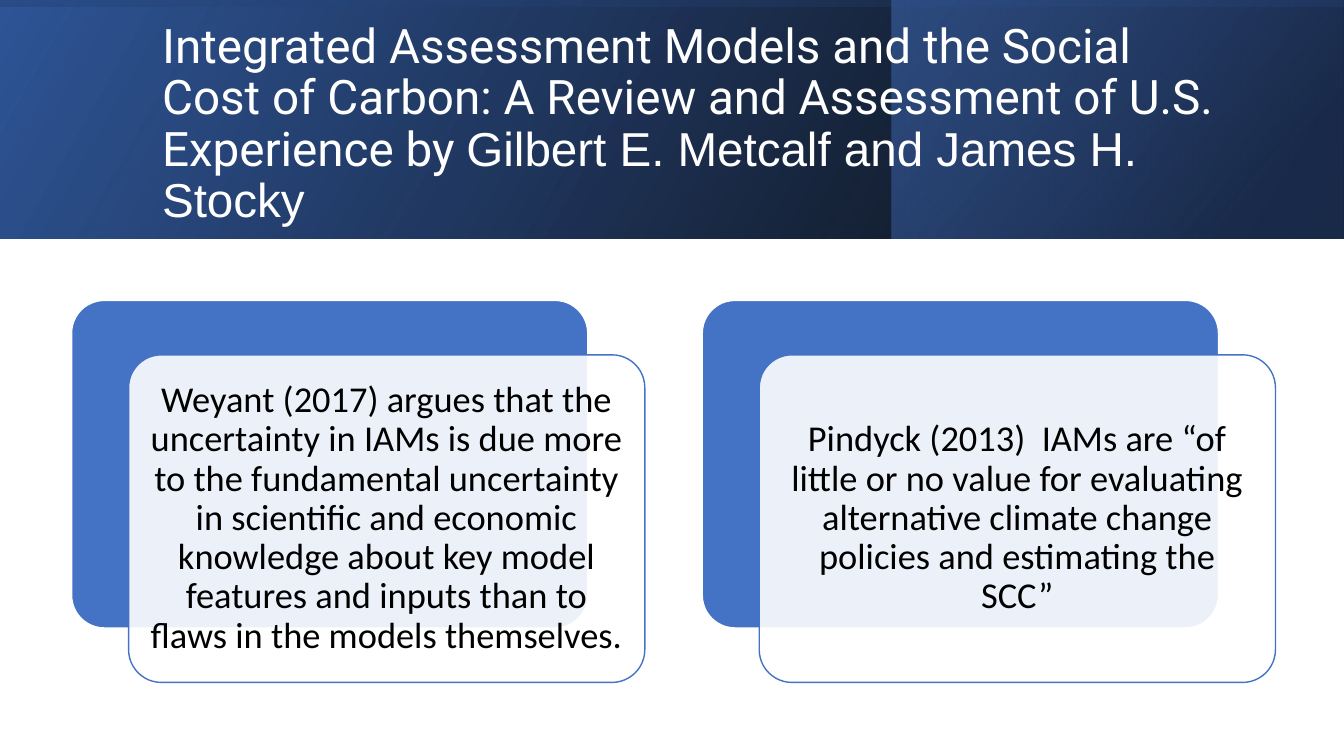
from dataclasses import dataclass

from lxml.etree import SubElement
from pptx import Presentation
from pptx.dml.color import RGBColor
from pptx.enum.shapes import MSO_SHAPE as Preset
from pptx.enum.text import MSO_ANCHOR as Anchor, PP_ALIGN as Align
from pptx.oxml.ns import qn
from pptx.shapes.autoshape import Shape
from pptx.slide import Slide
from pptx.util import Inches, Pt

PAGE_WIDTH, PAGE_HEIGHT = 13.33, 7.5
BANNER_HEIGHT = 2.37
CARD_WIDTH, CARD_HEIGHT = 5.12, 3.25
CARD_TOP, CARD_LEFT, CARD_PITCH = 2.98, 0.71, 6.255
FRONT_SHIFT_X, FRONT_SHIFT_Y = 0.565, 0.54
CARD_INSET = 0.11
BLUE, WHITE, BLACK = "4472C4", "FFFFFF", "000000"


@dataclass
class Stop:
    position: float
    color: str
    opacity: int = 100


@dataclass
class BannerLayer:
    left: float
    top: float
    width: float
    height: float
    angle: float  # counter-clockwise, before mirroring
    stops: tuple[Stop, Stop]
    rotation: float = 0


BANNER_LAYERS = [
    BannerLayer(0, 0, PAGE_WIDTH, BANNER_HEIGHT, 30,
                (Stop(0, BLACK, 96), Stop(1, "2F5597"))),
    BannerLayer(8.84, 0, 4.48, BANNER_HEIGHT, 40,
                (Stop(0.19, "203864", 68), Stop(1, BLUE, 48))),
    BannerLayer((PAGE_WIDTH - BANNER_HEIGHT) / 2, (BANNER_HEIGHT - PAGE_WIDTH) / 2,
                BANNER_HEIGHT, PAGE_WIDTH, 10,
                (Stop(0.23, "2F5597", 16), Stop(0.99, BLACK, 45)), rotation=270),
]

TITLE_SPANS = [
    ("Integrated Assessment Models and the Social Cost of Carbon: "
     "A Review and Assessment of U.S. Experience by ", "Roboto"),
    ("Gilbert E. Metcalf and James H. Stocky", "Arial"),
]

QUOTES = [
    "Weyant (2017) argues that the uncertainty in IAMs is due more to the fundamental "
    "uncertainty in scientific and economic knowledge about key model features and "
    "inputs than to flaws in the models themselves.",
    "Pindyck (2013)  IAMs are “of little or no value for evaluating alternative "
    "climate change policies and estimating the SCC”",
]


def rgb(color: str) -> RGBColor:
    return RGBColor.from_string(color)


def set_opacity(shape: Shape, percents: list[int]) -> None:
    """Give the fill colours of a shape their opacities, in order."""
    colors = list(shape.element.spPr.iter(qn("a:srgbClr")))
    for color, percent in zip(colors, percents):
        if percent < 100:
            SubElement(color, qn("a:alpha")).set("val", str(percent * 1000))


def add_banner_layer(page: Slide, layer: BannerLayer) -> None:
    box = page.shapes.add_shape(Preset.RECTANGLE, Inches(layer.left), Inches(layer.top),
                                Inches(layer.width), Inches(layer.height))
    box.shadow.inherit = False
    box.line.fill.background()
    box.rotation = layer.rotation
    box.element.spPr.find(qn("a:xfrm")).set("flipH", "1")
    box.fill.gradient()
    box.fill.gradient_angle = layer.angle
    for target, stop in zip(box.fill.gradient_stops, layer.stops):
        target.position = stop.position
        target.color.rgb = rgb(stop.color)
    set_opacity(box, [stop.opacity for stop in layer.stops])


def add_title(page: Slide) -> None:
    box = page.shapes.add_textbox(Inches(1.51), Inches(0.38), Inches(10.63), Inches(1.72))
    frame = box.text_frame
    frame.word_wrap = True
    frame.vertical_anchor = Anchor.MIDDLE
    para = frame.paragraphs[0]
    para.line_spacing = 0.9
    para.font.size = Pt(34)
    para.font.color.rgb = rgb(WHITE)
    for text, font_name in TITLE_SPANS:
        span = para.add_run()
        span.text = text
        span.font.name = font_name
        span.font.size = Pt(34)
        span.font.color.rgb = rgb(WHITE)


def add_panel(page: Slide, left: float, top: float, fill: str, line: str) -> Shape:
    panel = page.shapes.add_shape(Preset.ROUNDED_RECTANGLE, Inches(left), Inches(top),
                                  Inches(CARD_WIDTH), Inches(CARD_HEIGHT))
    panel.adjustments[0] = 0.1
    panel.shadow.inherit = False
    panel.fill.solid()
    panel.fill.fore_color.rgb = rgb(fill)
    panel.line.color.rgb = rgb(line)
    panel.line.width = Pt(1)
    return panel


def add_quote_card(page: Slide, left: float, quote: str) -> None:
    add_panel(page, left, CARD_TOP, BLUE, WHITE)
    front = add_panel(page, left + FRONT_SHIFT_X, CARD_TOP + FRONT_SHIFT_Y, WHITE, BLUE)
    set_opacity(front, [90])
    frame = front.text_frame
    frame.word_wrap = True
    frame.vertical_anchor = Anchor.MIDDLE
    frame.margin_left = frame.margin_right = Inches(CARD_INSET)
    frame.margin_top = frame.margin_bottom = Inches(CARD_INSET)
    para = frame.paragraphs[0]
    para.text = quote
    para.alignment = Align.CENTER
    para.line_spacing = 0.9
    para.font.name = "Calibri"
    para.font.size = Pt(26)
    para.font.color.rgb = rgb(BLACK)


def main() -> None:
    deck = Presentation()
    deck.slide_width, deck.slide_height = Inches(PAGE_WIDTH), Inches(PAGE_HEIGHT)
    page = deck.slides.add_slide(deck.slide_layouts[6])
    for layer in BANNER_LAYERS:
        add_banner_layer(page, layer)
    add_title(page)
    for index, quote in enumerate(QUOTES):
        add_quote_card(page, CARD_LEFT + index * CARD_PITCH, quote)
    deck.save("out.pptx")


if __name__ == "__main__":
    main()
